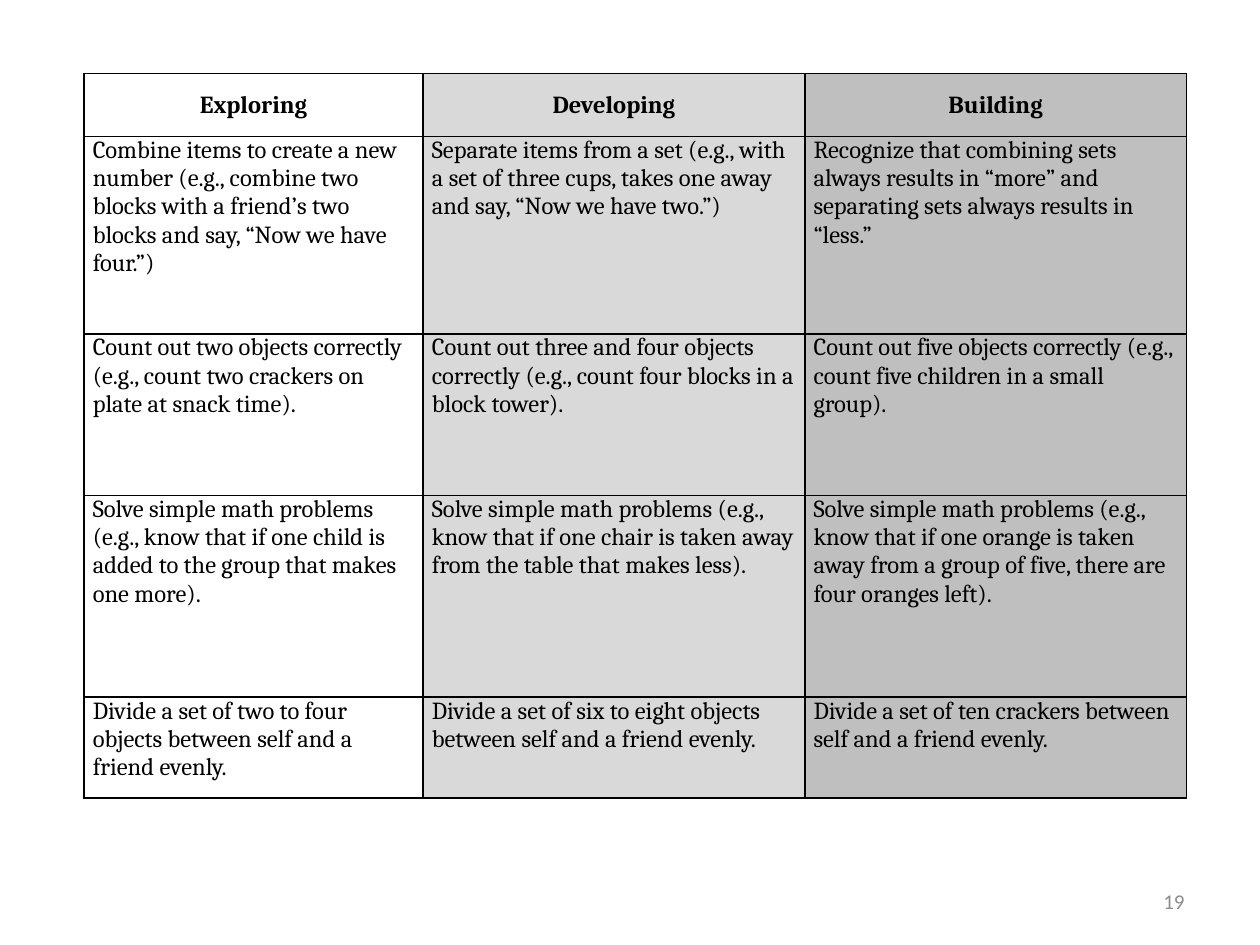
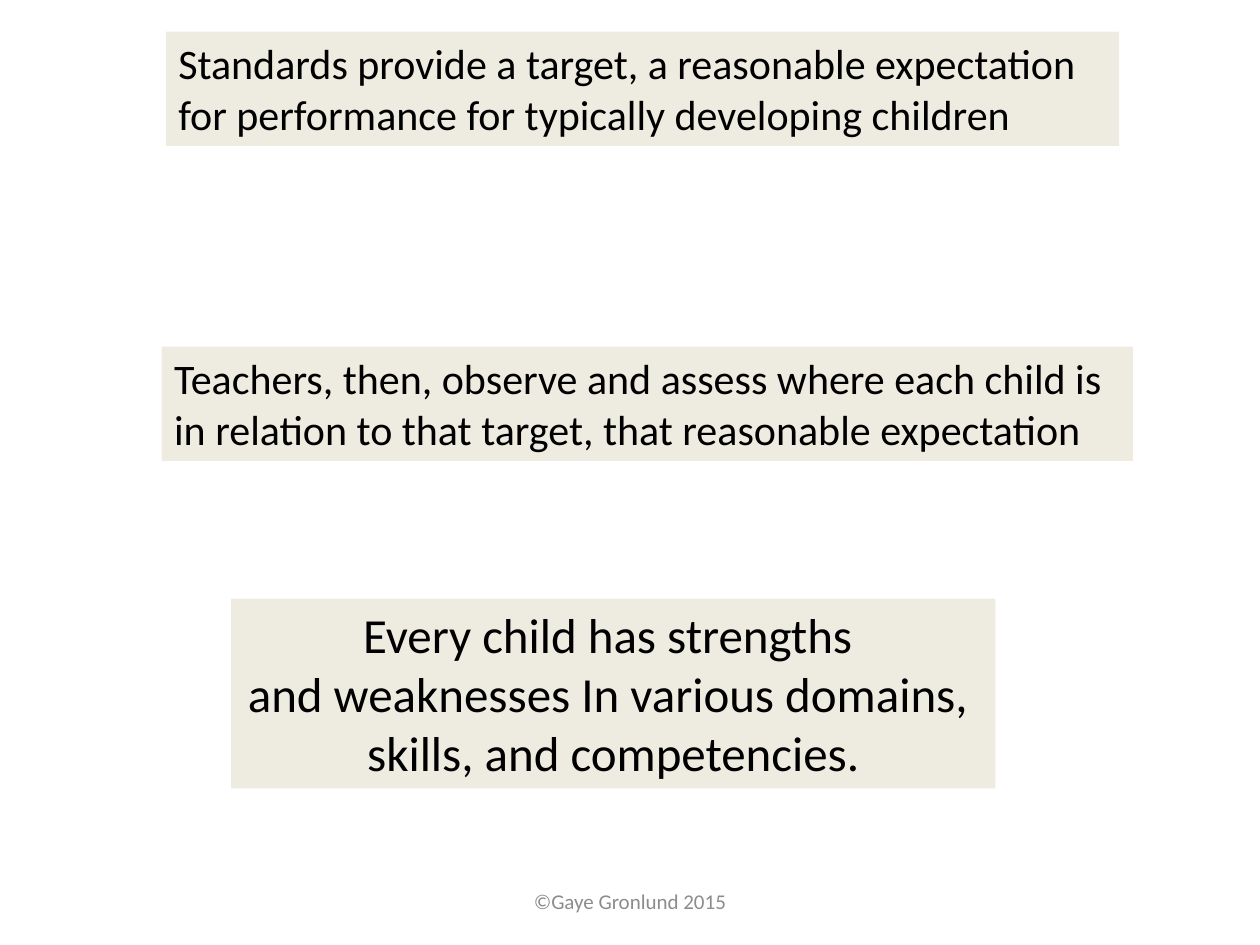
from dataclasses import dataclass

from lxml import etree
from pptx import Presentation
from pptx.dml.color import RGBColor
from pptx.enum import shapes, text
from pptx.oxml import ns
from pptx.util import Emu, Inches, Pt

COLORS = {
    "ink": "000000",
    "footer": "8C8C8C",
    "panel": "EEECE1",
    "developing": "D9D9D9",
    "building": "BFBFBF",
}
BODY_FONT, TABLE_FONT = "Calibri", "Cambria"
LEFT, CENTER, RIGHT = text.PP_ALIGN.LEFT, text.PP_ALIGN.CENTER, text.PP_ALIGN.RIGHT

# The slide is a grid of 120 columns by 90 rows
SLIDE_W, SLIDE_H = Inches(10), Inches(7.5)
COLUMNS, ROWS = 120, 90


def across(columns: float) -> Emu:
    return Emu(round(SLIDE_W * columns / COLUMNS))


def down(rows: float) -> Emu:
    return Emu(round(SLIDE_H * rows / ROWS))


@dataclass
class Area:
    column: float
    row: float
    columns: float
    rows: float

    def place(self) -> tuple[Emu, Emu, Emu, Emu]:
        return across(self.column), down(self.row), across(self.columns), down(self.rows)


@dataclass
class Statement:
    area: Area
    words: str
    size: int = 24
    align: text.PP_ALIGN = LEFT


@dataclass
class Level:
    name: str
    columns: float
    fill: str | None
    skills: list[str]


LEVELS = [
    Level("Exploring", 32.3, None, [
        "Combine items to create a new number (e.g., combine two blocks with a "
        "friend’s two blocks and say, “Now we have four.”)",
        "Count out two objects correctly (e.g., count two crackers on plate at snack time).",
        "Solve simple math problems (e.g., know that if one child is added to the "
        "group that makes one more).",
        "Divide a set of two to four objects between self and a friend evenly.",
    ]),
    Level("Developing", 36.35, "developing", [
        "Separate items from a set (e.g., with a set of three cups, takes one away "
        "and say, “Now we have two.”)",
        "Count out three and four objects correctly (e.g., count four blocks in a block tower).",
        "Solve simple math problems (e.g., know that if one chair is taken away "
        "from the table that makes less).",
        "Divide a set of six to eight objects between self and a friend evenly.",
    ]),
    Level("Building", 36.35, "building", [
        "Recognize that combining sets always results in “more” and separating "
        "sets always results in “less.”",
        "Count out five objects correctly (e.g., count five children in a small group).",
        "Solve simple math problems (e.g., know that if one orange is taken away "
        "from a group of five, there are four oranges left).",
        "Divide a set of ten crackers between self and a friend evenly.",
    ]),
]
SKILL_ROWS = [6, 18.8, 15.4, 19.2, 9.6]
SKILLS_AREA = Area(8, 7, sum(level.columns for level in LEVELS), sum(SKILL_ROWS))

STATEMENTS = [
    Statement(Area(15.8, 3, 90.8, 10.9),
              "Standards provide a target, a reasonable expectation\n"
              "for performance for typically developing children"),
    Statement(Area(15.4, 33, 92.5, 10.9),
              "Teachers, then, observe and assess where each child is\n"
              "in relation to that target, that reasonable expectation"),
    Statement(Area(22, 57, 72.8, 18.1),
              "Every child has strengths \n"
              "and weaknesses In various domains, \n"
              "skills, and competencies.", 28, CENTER),
]


def rgb(name: str) -> RGBColor:
    return RGBColor.from_string(COLORS[name])


def write(frame, words: str, size: int, font: str = BODY_FONT, color: str = "ink",
          align: text.PP_ALIGN = LEFT, bold: bool = False) -> None:
    frame.text = words
    for paragraph in frame.paragraphs:
        paragraph.alignment = align
        for run in paragraph.runs:
            run.font.name, run.font.size, run.font.bold = font, Pt(size), bold
            run.font.color.rgb = rgb(color)


def add_footer(slide, area: Area, words: str, align: text.PP_ALIGN) -> None:
    frame = slide.shapes.add_textbox(*area.place()).text_frame
    frame.word_wrap = True
    frame.vertical_anchor = text.MSO_ANCHOR.MIDDLE
    write(frame, words, 12, color="footer", align=align)


def add_statement(slide, statement: Statement) -> None:
    panel = slide.shapes.add_shape(shapes.MSO_SHAPE.RECTANGLE, *statement.area.place())
    panel.shadow.inherit = False
    panel.fill.solid()
    panel.fill.fore_color.rgb = rgb("panel")
    panel.line.fill.background()
    frame = panel.text_frame
    frame.word_wrap = False
    frame.auto_size = text.MSO_AUTO_SIZE.SHAPE_TO_FIT_TEXT
    frame.vertical_anchor = text.MSO_ANCHOR.TOP
    write(frame, statement.words, statement.size, align=statement.align)


def add_borders(cell) -> None:
    properties = cell._tc.get_or_add_tcPr()
    for side in ("lnL", "lnR", "lnT", "lnB"):
        line = etree.SubElement(properties, ns.qn(f"a:{side}"), w=str(Pt(1)))
        fill = etree.SubElement(line, ns.qn("a:solidFill"))
        etree.SubElement(fill, ns.qn("a:srgbClr"), val=COLORS["ink"])


def fill_cell(cell, words: str, fill: str | None, heading: bool) -> None:
    cell.margin_left = cell.margin_right = across(0.84)
    cell.margin_top = cell.margin_bottom = 0
    cell.vertical_anchor = text.MSO_ANCHOR.MIDDLE if heading else text.MSO_ANCHOR.TOP
    add_borders(cell)
    if fill:
        cell.fill.solid()
        cell.fill.fore_color.rgb = rgb(fill)
    else:
        cell.fill.background()
    write(cell.text_frame, words, 14, TABLE_FONT, align=CENTER if heading else LEFT,
          bold=heading)


def add_skills_table(slide) -> None:
    skills = slide.shapes.add_table(len(SKILL_ROWS), len(LEVELS), *SKILLS_AREA.place()).table
    for row, height in zip(skills.rows, SKILL_ROWS):
        row.height = down(height)
    for column, level in enumerate(LEVELS):
        skills.columns[column].width = across(level.columns)
        for row, words in enumerate([level.name, *level.skills]):
            fill_cell(skills.cell(row, column), words, level.fill, heading=row == 0)


def main() -> None:
    deck = Presentation()
    deck.slide_width, deck.slide_height = SLIDE_W, SLIDE_H
    blank = deck.slide_layouts[6]

    # Skills by level
    progression = deck.slides.add_slide(blank)
    add_skills_table(progression)
    add_footer(progression, Area(86, 83.4, 28, 4.8), "19", RIGHT)

    # Standards as targets
    standards = deck.slides.add_slide(blank)
    add_footer(standards, Area(41, 83.4, 38, 4.8), "©Gaye Gronlund 2015", CENTER)
    for statement in STATEMENTS:
        add_statement(standards, statement)

    deck.save("out.pptx")


if __name__ == "__main__":
    main()
